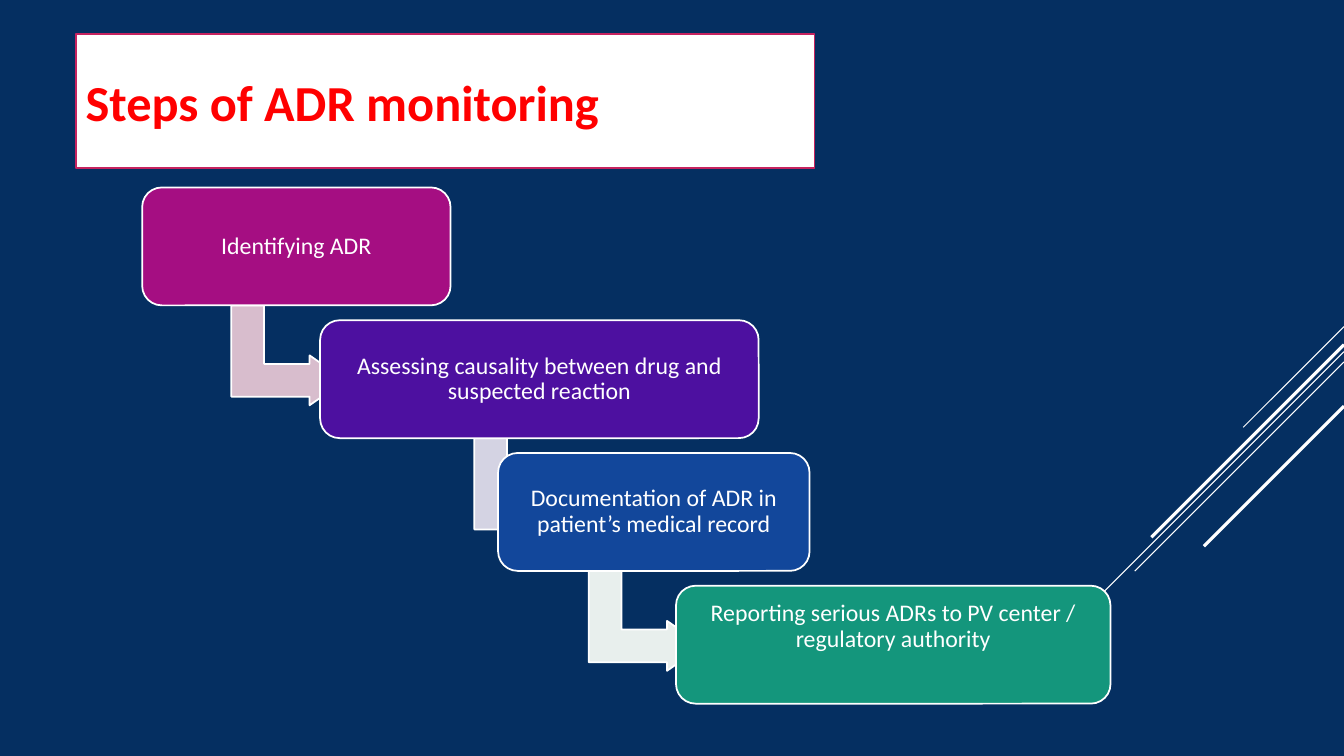
"""Build the slide on the steps of ADR monitoring."""
import pptx
import pptx.dml.color
import pptx.enum.shapes
import pptx.enum.text
import pptx.oxml.ns
import pptx.util
from lxml import etree

RGBColor = pptx.dml.color.RGBColor
Shapes = pptx.enum.shapes.MSO_SHAPE
Align = pptx.enum.text.PP_ALIGN

NAVY = RGBColor(0x05, 0x2F, 0x61)
WHITE = RGBColor(0xFF, 0xFF, 0xFF)
RED = RGBColor(0xFF, 0x00, 0x00)
CRIMSON = RGBColor(0xC6, 0x23, 0x5F)
MAGENTA = RGBColor(0xA5, 0x0E, 0x82)
VIOLET = RGBColor(0x4D, 0x10, 0xA0)
BLUE = RGBColor(0x12, 0x47, 0x9B)
GREEN = RGBColor(0x14, 0x96, 0x7C)
PALE_PINK = RGBColor(0xD8, 0xBD, 0xCD)
PALE_VIOLET = RGBColor(0xD4, 0xD3, 0xE3)
PALE_GREEN = RGBColor(0xE8, 0xEF, 0xED)

SLIDE_WIDTH = pptx.util.Inches(13.33)
SLIDE_HEIGHT = pptx.util.Inches(7.5)
FONT = "Calibri"


def across(percent):
    """Return a percentage of the slide's width."""
    return round(SLIDE_WIDTH * percent / 100)


def down(percent):
    """Return a percentage of the slide's height."""
    return round(SLIDE_HEIGHT * percent / 100)


STEP_LEFT, STEP_RIGHTWARD = across(10.58), across(13.24)
STEP_TOP, STEP_DOWNWARD = down(24.8), down(17.56)
STEP_HEIGHT = down(15.6)
STEP_INSET = down(1.7)
LAST_STEP_LIFT = down(4.7)
ARROW_WIDTH, ARROW_HEIGHT = down(13.2), down(15.07)
ARROW_OFFSET, ARROW_DROP = down(1.07), down(14.67)

STEPS = [
    ("Identifying ADR", 22.95, MAGENTA, PALE_PINK),
    ("Assessing causality between drug and suspected reaction", 32.63, VIOLET, PALE_VIOLET),
    ("Documentation of ADR in patient’s medical record", 23.18, BLUE, PALE_GREEN),
    ("Reporting serious ADRs to PV center / regulatory authority", 32.33, GREEN, None),
]
DIAGONALS = [
    (43.2, 13.33, 0.75),
    (46.53, 43.47, 0.75),
    (47.87, 27.67, 0.75),
    (45.6, 25.47, 2.25),
    (53.73, 18.53, 2.25),
]


def add_diagonal(slide, start, reach, weight):
    """Draw a 45-degree line from the right edge of the slide."""
    connector = slide.shapes.add_connector(
        pptx.enum.shapes.MSO_CONNECTOR.STRAIGHT,
        SLIDE_WIDTH, down(start), SLIDE_WIDTH - down(reach), down(start + reach))
    connector.line.color.rgb = WHITE
    connector.line.width = pptx.util.Pt(weight)
    properties = connector._element.spPr
    etree.SubElement(properties, pptx.oxml.ns.qn("a:effectLst"))


def add_outlined_shape(slide, kind, bounds, fill, outline):
    """Add a filled preset shape with a thin outline."""
    shape = slide.shapes.add_shape(kind, *bounds)
    shape.shadow.inherit = False
    shape.fill.solid()
    shape.fill.fore_color.rgb = fill
    shape.line.color.rgb = outline
    shape.line.width = pptx.util.Pt(1.25)
    return shape


def write_text(shape, text, size, color, alignment, bold=False):
    """Put one formatted paragraph in a shape and return it."""
    frame = shape.text_frame
    frame.word_wrap = True
    frame.vertical_anchor = pptx.enum.text.MSO_ANCHOR.MIDDLE
    frame.text = text
    paragraph = frame.paragraphs[0]
    paragraph.alignment = alignment
    font = paragraph.runs[0].font
    font.name = FONT
    font.size = pptx.util.Pt(size)
    font.bold = bold
    font.color.rgb = color
    return paragraph


def add_arrow(slide, center, step_top, fill):
    """Add the bent arrow that leads from a step to the next."""
    bounds = (center - ARROW_OFFSET - ARROW_WIDTH // 2, step_top + ARROW_DROP,
              ARROW_WIDTH, ARROW_HEIGHT)
    arrow = add_outlined_shape(slide, Shapes.BENT_UP_ARROW, bounds, fill, WHITE)
    arrow.rotation = 90
    for index, value in enumerate((0.328, 0.25, 0.358)):
        arrow.adjustments[index] = value


def add_step(slide, index, text, width_percent, fill, arrow_fill):
    """Add one stair of the process with its outgoing arrow."""
    left = STEP_LEFT + index * STEP_RIGHTWARD
    top = STEP_TOP + index * STEP_DOWNWARD
    width = across(width_percent)
    if arrow_fill is not None:
        add_arrow(slide, left + width // 2, top, arrow_fill)
    box = add_outlined_shape(slide, Shapes.ROUNDED_RECTANGLE,
                             (left, top, width, STEP_HEIGHT), fill, WHITE)
    paragraph = write_text(box, text, 17, WHITE, Align.CENTER)
    paragraph.line_spacing = 0.9
    frame = box.text_frame
    frame.margin_left = frame.margin_right = STEP_INSET
    frame.margin_top = frame.margin_bottom = STEP_INSET
    if arrow_fill is None:
        frame.margin_bottom = STEP_INSET + LAST_STEP_LIFT


def add_title(slide):
    """Add the framed heading."""
    bounds = (across(5.63), down(4.53), across(54.98), down(17.73))
    box = add_outlined_shape(slide, Shapes.RECTANGLE, bounds, WHITE, CRIMSON)
    paragraph = write_text(box, "Steps of ADR monitoring", 36, RED, Align.LEFT, bold=True)
    paragraph.space_before = pptx.util.Pt(7)


def main():
    """Build and save the presentation."""
    presentation = pptx.Presentation()
    presentation.slide_width = SLIDE_WIDTH
    presentation.slide_height = SLIDE_HEIGHT
    slide = presentation.slides.add_slide(presentation.slide_layouts[6])
    slide.background.fill.solid()
    slide.background.fill.fore_color.rgb = NAVY
    for diagonal in DIAGONALS:
        add_diagonal(slide, *diagonal)
    for index, step in enumerate(STEPS):
        add_step(slide, index, *step)
    add_title(slide)
    presentation.save("out.pptx")


if __name__ == "__main__":
    main()
